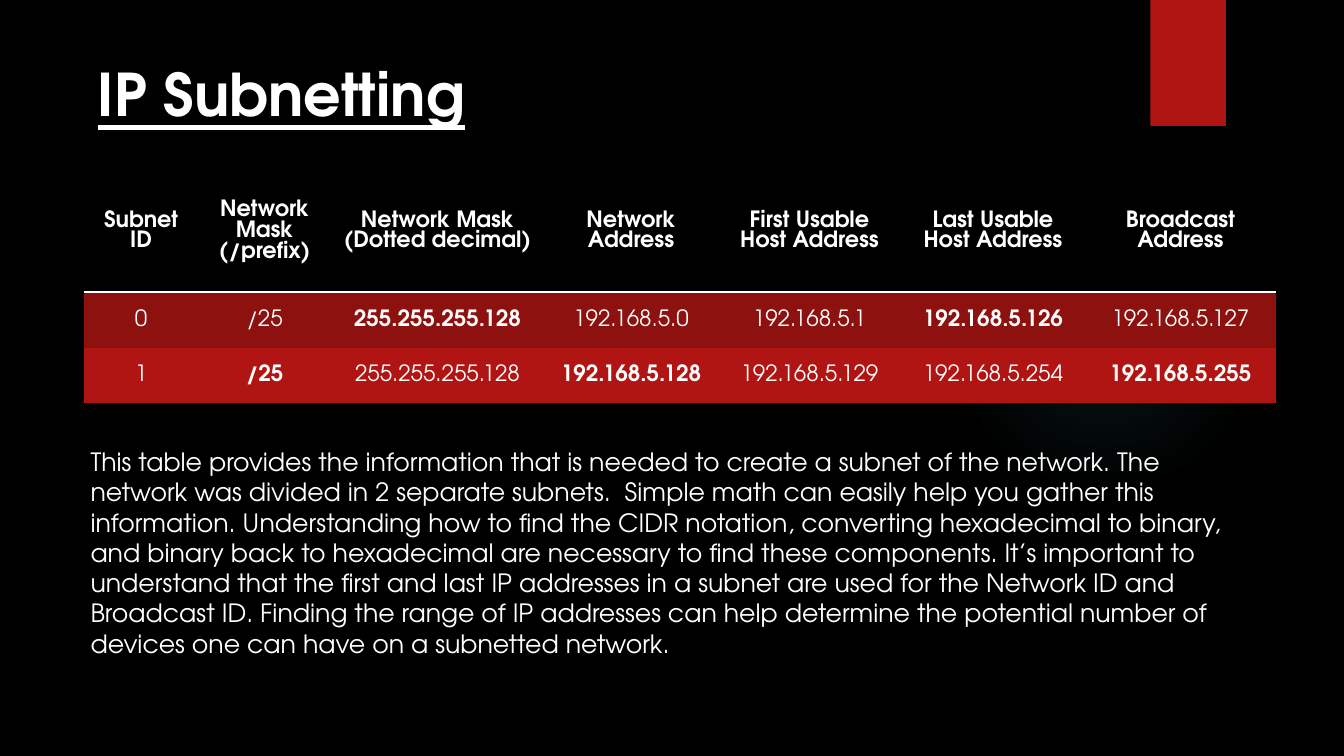
from lxml import etree
from pptx import Presentation
from pptx.dml.color import RGBColor
from pptx.enum import shapes, text
from pptx.oxml import ns, parse_xml
from pptx.util import Inches, Pt

FONT = "TeX Gyre Adventor"
BLACK = RGBColor(0x00, 0x00, 0x00)
WHITE = RGBColor(0xFF, 0xFF, 0xFF)
RED = RGBColor(0xB0, 0x15, 0x13)
DARK_RED = RGBColor(0x8D, 0x11, 0x0F)
TEAL = RGBColor(0x50, 0xB9, 0xC1)

TITLE = "IP Subnetting"
EXPLANATION = (
    "This table provides the information that is needed to create a subnet of the network. "
    "The network was divided in 2 separate subnets.  Simple math can easily help you gather "
    "this information. Understanding how to find the CIDR notation, converting hexadecimal to "
    "binary, and binary back to hexadecimal are necessary to find these components. It’s "
    "important to understand that the first and last IP addresses in a subnet are used for the "
    "Network ID and Broadcast ID. Finding the range of IP addresses can help determine the "
    "potential number of devices one can have on a subnetted network."
)
SUBNETS = [
    ["Subnet ID", "Network Mask\n(/prefix)", "Network Mask\n(Dotted decimal)", "Network Address",
     "First Usable Host Address", "Last Usable Host Address", "Broadcast\nAddress"],
    ["0", "/25", "255.255.255.128", "192.168.5.0", "192.168.5.1", "192.168.5.126",
     "192.168.5.127"],
    ["1", "/25", "255.255.255.128", "192.168.5.128", "192.168.5.129", "192.168.5.254",
     "192.168.5.255"],
]
ROW_FILLS = [BLACK, DARK_RED, RED]
BOLD_COLUMNS = [range(7), (2, 5), (1, 3, 6)]
COLUMN_WIDTHS = [1.14, 1.31, 2.12, 1.72, 1.82, 1.82, 1.9]
ROW_HEIGHTS = [1.21, 0.55, 0.55]
GLOW_STOPS = [(0, 7), (36, 6), (69, 0)]  # position and opacity, percent
NO_STYLE_NO_GRID = "{2D5ABB26-0587-4C30-8999-92F81FD0307C}"


def xml(body):
    """Parse a DrawingML fragment, declaring its namespace on the first tag."""
    return parse_xml(body.replace(">", f" {ns.nsdecls('a')}>", 1))


def write(frame, content, size, bold=False, underline=False, align=None):
    for index, line in enumerate(content.split("\n")):
        paragraph = frame.add_paragraph() if index else frame.paragraphs[0]
        paragraph.alignment = align
        run = paragraph.add_run()
        run.text = line
        font = run.font
        font.name, font.size, font.bold, font.underline = FONT, Pt(size), bold, underline
        font.color.rgb = WHITE


def add_text(slide, box, anchor, content, size, **style):
    frame = slide.shapes.add_textbox(*map(Inches, box)).text_frame
    frame.word_wrap = True
    frame.vertical_anchor = anchor
    write(frame, content, size, **style)


def add_glow(slide):
    glow = slide.shapes.add_shape(
        shapes.MSO_SHAPE.OVAL, *map(Inches, (9.41, 1.83, 3.08, 3.08)))
    glow.shadow.inherit = False
    glow.line.fill.background()
    glow.fill.background()
    stops = "".join(
        f'<a:gs pos="{pos * 1000}"><a:srgbClr val="{TEAL}">'
        f'<a:alpha val="{alpha * 1000}"/></a:srgbClr></a:gs>' for pos, alpha in GLOW_STOPS)
    gradient = xml(
        f'<a:gradFill><a:gsLst>{stops}</a:gsLst><a:path path="circle">'
        '<a:fillToRect l="50000" t="50000" r="50000" b="50000"/></a:path></a:gradFill>')
    properties = glow.element.spPr
    properties.replace(properties.find(ns.qn("a:noFill")), gradient)


def add_ribbon(slide):
    ribbon = slide.shapes.add_shape(
        shapes.MSO_SHAPE.RECTANGLE, *map(Inches, (11.41, 0, 0.75, 1.25)))
    ribbon.shadow.inherit = False
    ribbon.fill.solid()
    ribbon.fill.fore_color.rgb = RED
    ribbon.line.fill.background()
    effects = ribbon.element.spPr.find(ns.qn("a:effectLst"))
    effects.append(xml(
        f'<a:outerShdw blurRad="{Pt(3)}" dist="{Pt(2)}" dir="5400000" rotWithShape="0">'
        f'<a:srgbClr val="{BLACK}"><a:alpha val="45000"/></a:srgbClr></a:outerShdw>'))


def add_subnet_table(slide):
    table = slide.shapes.add_table(
        len(SUBNETS), len(COLUMN_WIDTHS), Inches(0.83), Inches(1.69),
        Inches(sum(COLUMN_WIDTHS)), Inches(sum(ROW_HEIGHTS))).table
    style = table._tbl.tblPr.find(ns.qn("a:tableStyleId"))
    style.text = NO_STYLE_NO_GRID
    for column, width in zip(table.columns, COLUMN_WIDTHS):
        column.width = Inches(width)
    for r, (row, height) in enumerate(zip(table.rows, ROW_HEIGHTS)):
        row.height = Inches(height)
        for c, cell in enumerate(row.cells):
            cell.vertical_anchor = text.MSO_ANCHOR.MIDDLE
            cell.fill.solid()
            cell.fill.fore_color.rgb = ROW_FILLS[r]
            write(cell.text_frame, SUBNETS[r][c], 16, bold=c in BOLD_COLUMNS[r],
                  align=text.PP_ALIGN.CENTER)
            if r == 0:
                rule = xml(f'<a:lnB w="{Pt(1.5)}"></a:lnB>')
                fill = etree.SubElement(rule, ns.qn("a:solidFill"))
                etree.SubElement(fill, ns.qn("a:srgbClr"), val=str(WHITE))
                cell._tc.tcPr.insert(0, rule)


def main():
    deck = Presentation()
    deck.slide_width, deck.slide_height = Inches(13.33), Inches(7.5)
    slide = deck.slides.add_slide(deck.slide_layouts[6])
    slide.background.fill.solid()
    slide.background.fill.fore_color.rgb = BLACK
    add_glow(slide)
    add_ribbon(slide)
    add_text(slide, (0.8, 4.38, 11.83, 2.13), text.MSO_ANCHOR.TOP, EXPLANATION, 18)
    add_text(slide, (0.83, 0.63, 3.92, 0.58), text.MSO_ANCHOR.MIDDLE, TITLE, 42,
             bold=True, underline=True, align=text.PP_ALIGN.CENTER)
    add_subnet_table(slide)
    deck.save("out.pptx")


if __name__ == "__main__":
    main()
